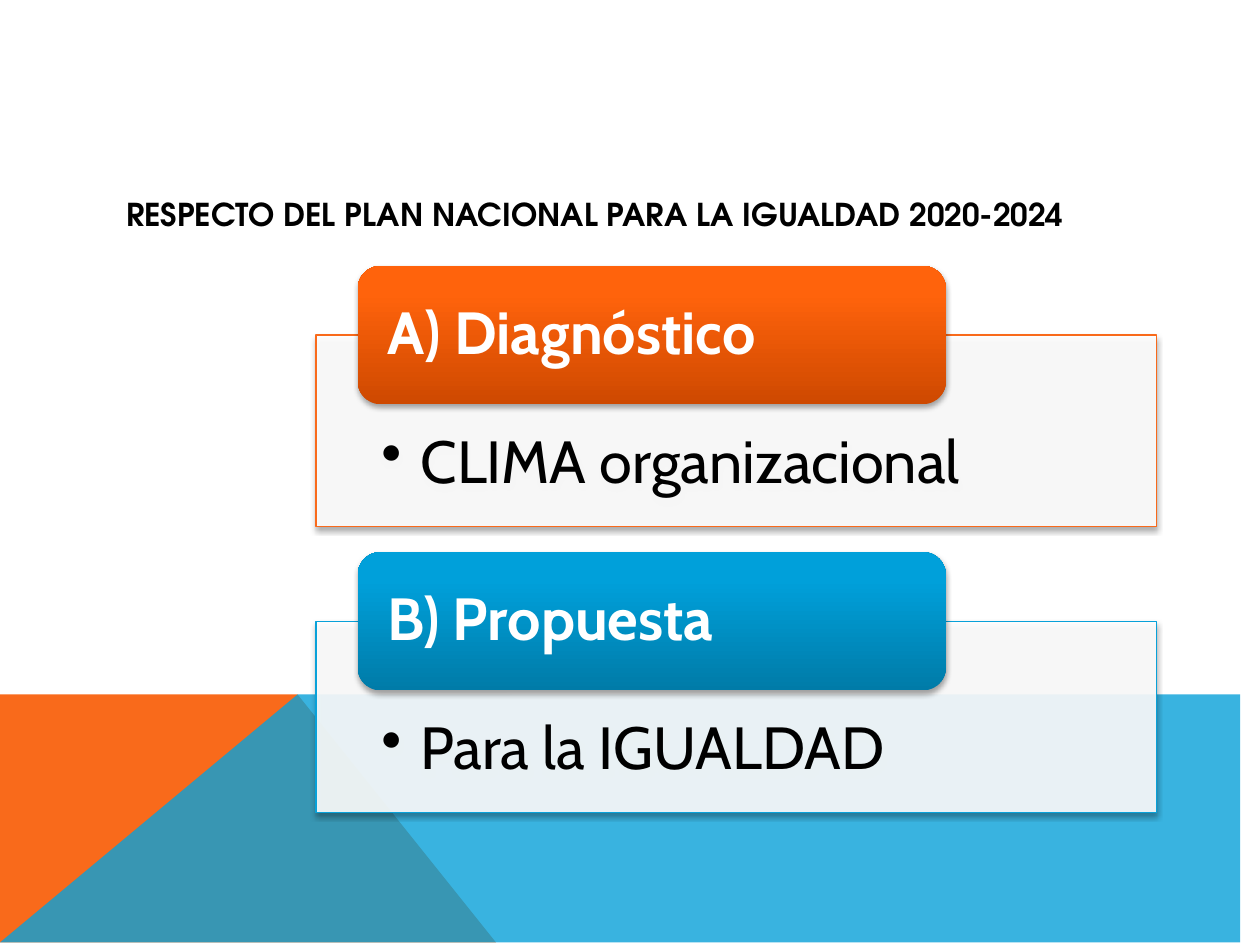
from lxml import etree
from pptx import Presentation
from pptx.dml.color import RGBColor
from pptx.enum.shapes import MSO_SHAPE
from pptx.enum.text import MSO_ANCHOR, MSO_AUTO_SIZE, PP_ALIGN
from pptx.oxml.ns import qn
from pptx.util import Cm, Pt

RECTANGLE = MSO_SHAPE.RECTANGLE
ROUNDED = MSO_SHAPE.ROUNDED_RECTANGLE
TOP, MIDDLE = MSO_ANCHOR.TOP, MSO_ANCHOR.MIDDLE
LEFT = PP_ALIGN.LEFT
NO_AUTOFIT = MSO_AUTO_SIZE.NONE

TITLE_ONLY = 5
WIDTH, HEIGHT = 25.4, 19.05
COLORS = {
    "orange": "F96A1B", "orange_dark": "CE4900", "orange_light": "FF630C",
    "blue": "08A1D9", "blue_dark": "007BA8", "blue_light": "00A0DA",
    "white": "FFFFFF", "black": "000000",
}


def rgb(name):
    return RGBColor.from_string(COLORS[name])


class SlideBuilder:
    title_font, body_font = "TeX Gyre Adventor", "Cabin"
    title_size, body_size = 18, 34

    def __init__(self, slide):
        self.slide = slide

    def set_text(self, frame, text, font, size, color, bold, anchor, margins):
        frame.word_wrap = True
        frame.auto_size = NO_AUTOFIT
        frame.vertical_anchor = anchor
        (frame.margin_left, frame.margin_top,
         frame.margin_right, frame.margin_bottom) = [Cm(m) for m in margins]
        frame.text = text
        paragraph = frame.paragraphs[0]
        paragraph.alignment = LEFT
        paragraph.line_spacing = 0.9
        run_font = paragraph.runs[0].font
        run_font.name, run_font.size, run_font.bold = font, Pt(size), bold
        run_font.color.rgb = rgb(color)
        return paragraph

    def fill(self, shape, color, opacity=100):
        shape.fill.solid()
        shape.fill.fore_color.rgb = rgb(color)
        if opacity < 100:
            color_element = shape._element.spPr.find(".//" + qn("a:srgbClr"))
            etree.SubElement(color_element, qn("a:alpha"), val=str(opacity * 1000))

    def drop_shadow(self, shape):
        shape.shadow.inherit = False
        effects = shape._element.spPr.find(qn("a:effectLst"))
        shadow = etree.SubElement(
            effects, qn("a:outerShdw"), blurRad=str(Pt(3.1)), dist=str(Pt(1.8)),
            dir="5400000", rotWithShape="0")
        color = etree.SubElement(shadow, qn("a:srgbClr"), val=COLORS["black"])
        etree.SubElement(color, qn("a:alpha"), val="35000")

    def title(self, text, left, top, width, height):
        title = self.slide.shapes.title
        title.left, title.top = Cm(left), Cm(top)
        title.width, title.height = Cm(width), Cm(height)
        self.set_text(title.text_frame, text, self.title_font, self.title_size,
                      "black", True, MIDDLE, (0.25, 0, 0.25, 0))

    def polygon(self, points, color, opacity=100):
        builder = self.slide.shapes.build_freeform(*points[0], scale=Cm(1))
        builder.add_line_segments(points[1:], close=True)
        shape = builder.convert_to_shape()
        shape.shadow.inherit = False
        shape.line.fill.background()
        self.fill(shape, color, opacity)

    def box(self, kind, left, top, width, height):
        shape = self.slide.shapes.add_shape(
            kind, Cm(left), Cm(top), Cm(width), Cm(height))
        self.drop_shadow(shape)
        return shape

    def panel(self, text, color, left, top, width, height):
        panel = self.box(RECTANGLE, left, top, width, height)
        self.fill(panel, "white", 90)
        panel.line.color.rgb = rgb(color)
        panel.line.width = Pt(0.75)
        paragraph = self.set_text(panel.text_frame, text, self.body_font, self.body_size,
                                  "black", False, TOP, (1.32, 1.96, 1.32, 0.66))
        properties = paragraph._p.get_or_add_pPr()
        properties.set("marL", str(Cm(0.79)))
        properties.set("indent", str(-Cm(0.79)))
        etree.SubElement(properties, qn("a:buChar"), char="•")

    def label(self, text, color, left, top, width, height):
        label = self.box(ROUNDED, left, top, width, height)
        label.line.fill.background()
        label.fill.gradient()
        label.fill.gradient_angle = 90
        for stop, shade, position in zip(
                label.fill.gradient_stops, ("dark", "light"), (0, 0.8)):
            stop.color.rgb = rgb(f"{color}_{shade}")
            stop.position = position
        self.set_text(label.text_frame, text, self.body_font, self.body_size,
                      "white", True, MIDDLE, (0.46, 0, 0.46, 0))


def main():
    presentation = Presentation()
    presentation.slide_width, presentation.slide_height = Cm(WIDTH), Cm(HEIGHT)
    slide = presentation.slides.add_slide(presentation.slide_layouts[TITLE_ONLY])
    builder = SlideBuilder(slide)

    # Coloured band at the foot
    band_top, peak = 14.02, 5.66
    builder.polygon([(0, HEIGHT), (0, band_top), (peak, band_top), (9.93, HEIGHT)],
                    "orange")
    builder.polygon([(0, HEIGHT), (peak, band_top), (WIDTH, band_top), (WIDTH, HEIGHT)],
                    "blue", 80)

    # Title
    builder.title("RESPECTO DEL PLAN NACIONAL PARA LA IGUALDAD 2020-2024",
                  2.29, 3.85, 20.88, 1)

    # Panels, each with a label over its top edge
    cards = [("A) Diagnóstico", "CLIMA organizacional", "orange"),
             ("B) Propuesta", "Para la IGUALDAD", "blue")]
    first_top, pitch, label_height = 5.36, 5.77, 2.79
    for index, (heading, detail, color) in enumerate(cards):
        top = first_top + index * pitch
        builder.panel(detail, color, 6.37, top + label_height / 2, 16.94, 3.86)
        builder.label(heading, color, 7.21, top, 11.86, label_height)

    presentation.save("out.pptx")


if __name__ == "__main__":
    main()
